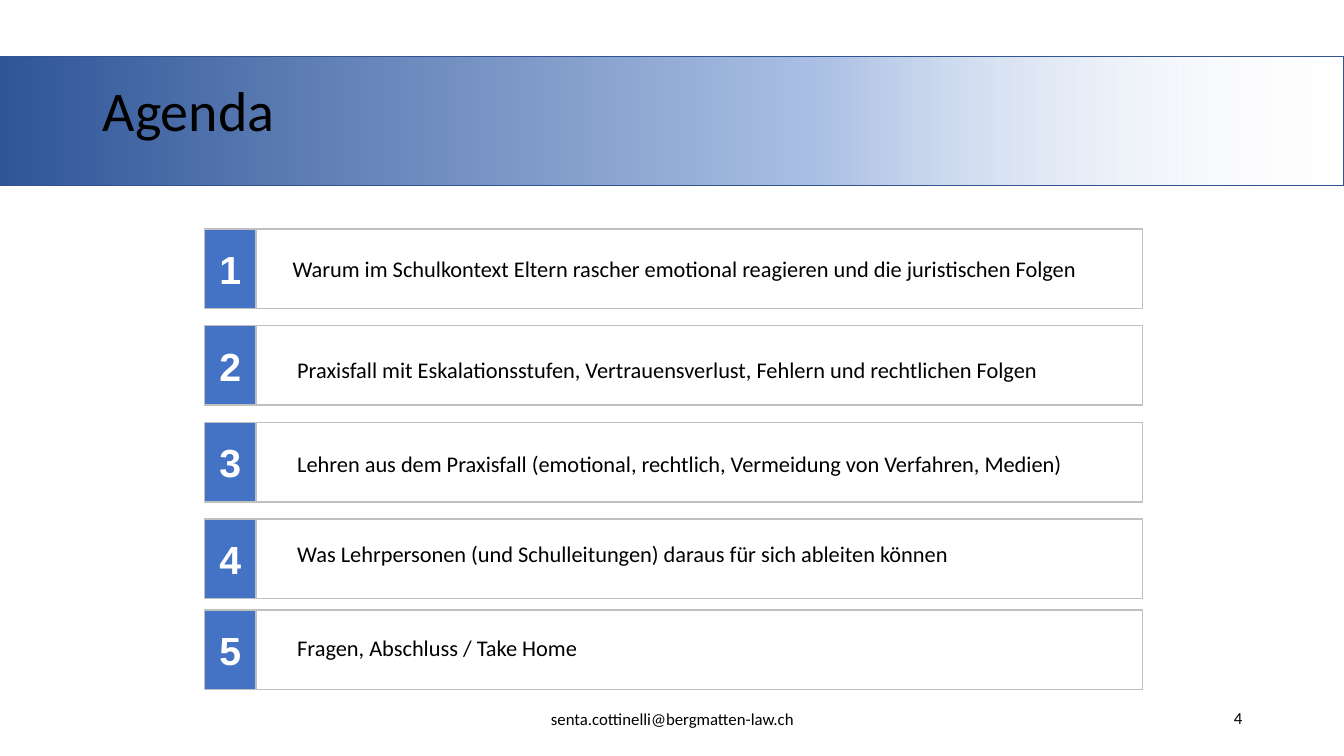
from lxml.etree import SubElement
from pptx import Presentation
from pptx.dml.color import RGBColor
from pptx.enum.shapes import MSO_SHAPE
from pptx.enum.text import MSO_ANCHOR, PP_ALIGN
from pptx.oxml.ns import qn
from pptx.util import Pt

TITLE = "Agenda"
MAIL = "senta.cottinelli@bergmatten-law.ch"
PAGE = "4"
ITEMS = [
    (227, 271, 251, PP_ALIGN.CENTER,
     "Warum im Schulkontext Eltern rascher emotional reagieren und die juristischen Folgen"),
    (323, 285, 351, PP_ALIGN.LEFT,
     "Praxisfall mit Eskalationsstufen, Vertrauensverlust, Fehlern und rechtlichen Folgen"),
    (419, 285, 445, PP_ALIGN.LEFT,
     "Lehren aus dem Praxisfall (emotional, rechtlich, Vermeidung von Verfahren, Medien)"),
    (515, 285, 534, PP_ALIGN.LEFT,
     "Was Lehrpersonen (und Schulleitungen) daraus für sich ableiten können"),
    (605, 285, 627, PP_ALIGN.LEFT,
     "Fragen, Abschluss / Take Home"),
]
STOPS = [(0, "F7FAFD", 0), (39, "ABC0E4", 100), (100, "2F5597", 100)]

BLACK = RGBColor(0, 0, 0)
WHITE = RGBColor(255, 255, 255)
BLUE = RGBColor(0x44, 0x72, 0xC4)
NAVY = RGBColor(0x32, 0x54, 0x91)
GREY = RGBColor(0xC0, 0xC0, 0xC0)

PX = 9144
WIDE, HIGH = 1333, 750
TAB_X, TAB_W = 203, 51
BAR_X, BAR_W, BAR_H = 253, 880, 79

deck = Presentation()
deck.slide_width, deck.slide_height = WIDE * PX, HIGH * PX
slide = deck.slides.add_slide(deck.slide_layouts[6])


def place(*box):
    return [n * PX for n in box]


def add_rect(box, edge, fill=None):
    rect = slide.shapes.add_shape(MSO_SHAPE.RECTANGLE, *place(*box))
    rect.shadow.inherit = False
    rect.line.color.rgb = edge
    rect.line.width = Pt(1)
    if fill is None:
        rect.fill.background()
    else:
        rect.fill.solid()
        rect.fill.fore_color.rgb = fill
    return rect


def write(frame, text, size, align, font="Calibri", color=BLACK, bold=False):
    frame.word_wrap = True
    par = frame.paragraphs[0]
    par.text = text
    par.alignment = align
    par.font.name = font
    par.font.size = Pt(size)
    par.font.color.rgb = color
    par.font.bold = bold
    return par


def add_text(box, text, size, align):
    frame = slide.shapes.add_textbox(*place(*box)).text_frame
    return frame, write(frame, text, size, align)


def shade(shape):
    shape.fill.gradient()
    shape.fill.gradient_angle = 180
    stops = shape.element.spPr.find(".//" + qn("a:gsLst"))
    for stop in list(stops):
        stops.remove(stop)
    for pos, color, alpha in STOPS:
        stop = SubElement(stops, qn("a:gs"), pos=str(pos * 1000))
        tint = SubElement(stop, qn("a:srgbClr"), val=color)
        SubElement(tint, qn("a:alpha"), val=str(alpha * 1000))


shade(add_rect((0, 56, WIDE, 128), NAVY))
add_text((442, 698, 450, 30), MAIL, 12, PP_ALIGN.CENTER)
add_text((942, 697, 300, 30), PAGE, 12, PP_ALIGN.RIGHT)
frame, par = add_text((92, 40, 1150, 145), TITLE, 40, PP_ALIGN.LEFT)
frame.vertical_anchor = MSO_ANCHOR.MIDDLE
par.line_spacing = 0.9

for num, (top, left, text_y, align, text) in enumerate(ITEMS, 1):
    add_rect((BAR_X, top, BAR_W, BAR_H), GREY)
    frame = add_rect((TAB_X, top, TAB_W, BAR_H), GREY, BLUE).text_frame
    frame.margin_left = frame.margin_right = 0
    frame.margin_top = frame.margin_bottom = 0
    frame.vertical_anchor = MSO_ANCHOR.MIDDLE
    write(frame, str(num), 28, PP_ALIGN.CENTER, "Arial", WHITE, True)
    frame, par = add_text((left, text_y, 816, 34), text, 16, align)
    par.line_spacing = 0.9

deck.save("out.pptx")
